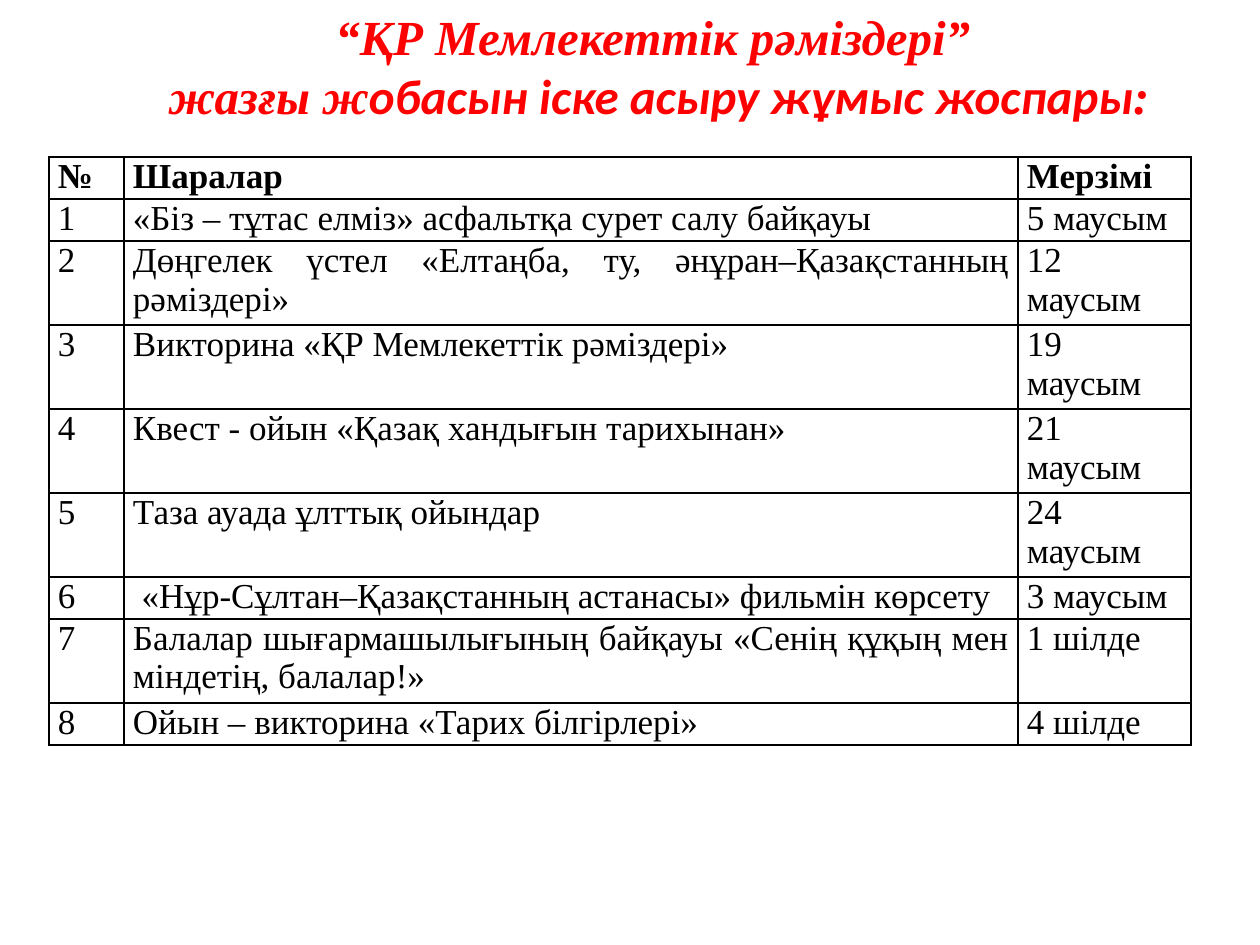
import pptx
import pptx.util
import pptx.dml.color
import pptx.enum.text
from dataclasses import dataclass
from lxml import etree
from pptx.oxml.ns import qn

# Content
TITLE = [
    [("“ҚР Мемлекеттік рәміздері” ", "serif")],
    [("жазғы ж", "serif"), ("обасын іске асыру жұмыс жоспары", "sans"), (":", "serif")],
]
HEADER = ("№", "Шаралар", "Мерзімі")
# Event, date, number of text lines
EVENTS = [
    ("«Біз – тұтас елміз» асфальтқа сурет салу байқауы", "5 маусым", 1),
    ("Дөңгелек үстел «Елтаңба, ту, әнұран–Қазақстанның рәміздері»", "12 маусым", 2),
    ("Викторина «ҚР Мемлекеттік рәміздері»", "19 маусым", 2),
    ("Квест - ойын «Қазақ хандығын тарихынан»", "21 маусым", 2),
    ("Таза ауада ұлттық ойындар", "24 маусым", 2),
    (" «Нұр-Сұлтан–Қазақстанның астанасы» фильмін көрсету", "3 маусым", 1),
    ("Балалар шығармашылығының байқауы «Сенің құқың мен міндетің, балалар!»", "1 шілде", 2),
    ("Ойын – викторина «Тарих білгірлері»", "4 шілде", 1),
]


@dataclass(frozen=True)
class Theme:
    serif: str = "Times New Roman"
    sans: str = "Calibri"
    title: str = "FF0000"
    ink: str = "000000"
    title_size: int = 28
    body_size: int = 20
    border: int = 1


T = Theme()
ALIGN = pptx.enum.text.PP_ALIGN

# Geometry in px
SLIDE = (1260, 945)
TITLE_BOX = (88, 0, 1080, 131)
TITLE_INDENT = 62
TABLE_LEFT, TABLE_TOP = 49, 157
COLS = (75, 894, 173)
LINE_H = 42
CELL_PAD = 9


def px(n):
    return pptx.util.Emu(n * 914400 // 126)


def write(p, text, font=T.serif, size=T.body_size, color=T.ink,
          bold=False, italic=False, align=ALIGN.JUSTIFY):
    p.alignment = align
    r = p.add_run()
    r.text = text
    f = r.font
    f.name, f.size, f.bold, f.italic = font, pptx.util.Pt(size), bold, italic
    f.color.rgb = pptx.dml.color.RGBColor.from_string(color)


def set_borders(cell):
    tcPr = cell._tc.get_or_add_tcPr()
    for i, side in enumerate(("lnL", "lnR", "lnT", "lnB")):
        ln = etree.Element(qn(f"a:{side}"), w=str(pptx.util.Pt(T.border)))
        fill = etree.SubElement(ln, qn("a:solidFill"))
        etree.SubElement(fill, qn("a:srgbClr"), val=T.ink)
        tcPr.insert(i, ln)


def add_plan(s):
    rows = [(HEADER, 1)]
    rows += [((str(n), event, date), lines)
             for n, (event, date, lines) in enumerate(EVENTS, 1)]
    height = LINE_H * sum(lines for _, lines in rows)
    table = s.shapes.add_table(len(rows), len(COLS), px(TABLE_LEFT), px(TABLE_TOP),
                               px(sum(COLS)), px(height)).table
    table.first_row = table.horz_banding = False
    for col, width in zip(table.columns, COLS):
        col.width = px(width)
    for i, (texts, lines) in enumerate(rows):
        table.rows[i].height = px(LINE_H * lines)
        for j, text in enumerate(texts):
            cell = table.cell(i, j)
            cell.margin_left = cell.margin_right = px(CELL_PAD)
            cell.margin_top = cell.margin_bottom = 0
            cell.fill.background()
            set_borders(cell)
            write(cell.text_frame.paragraphs[0], text, bold=i == 0)


def add_title(s):
    tf = s.shapes.add_textbox(*map(px, TITLE_BOX)).text_frame
    tf.word_wrap = False
    tf.vertical_anchor = pptx.enum.text.MSO_ANCHOR.MIDDLE
    for i, runs in enumerate(TITLE):
        p = tf.paragraphs[0] if i == 0 else tf.add_paragraph()
        p._p.get_or_add_pPr().set("indent", str(px(TITLE_INDENT)))
        for text, face in runs:
            write(p, text, font=getattr(T, face), size=T.title_size, color=T.title,
                  bold=True, italic=True, align=ALIGN.CENTER)


def main():
    prs = pptx.Presentation()
    prs.slide_width, prs.slide_height = map(px, SLIDE)
    s = prs.slides.add_slide(prs.slide_layouts[6])
    add_plan(s)
    add_title(s)
    prs.save("out.pptx")


if __name__ == "__main__":
    main()
